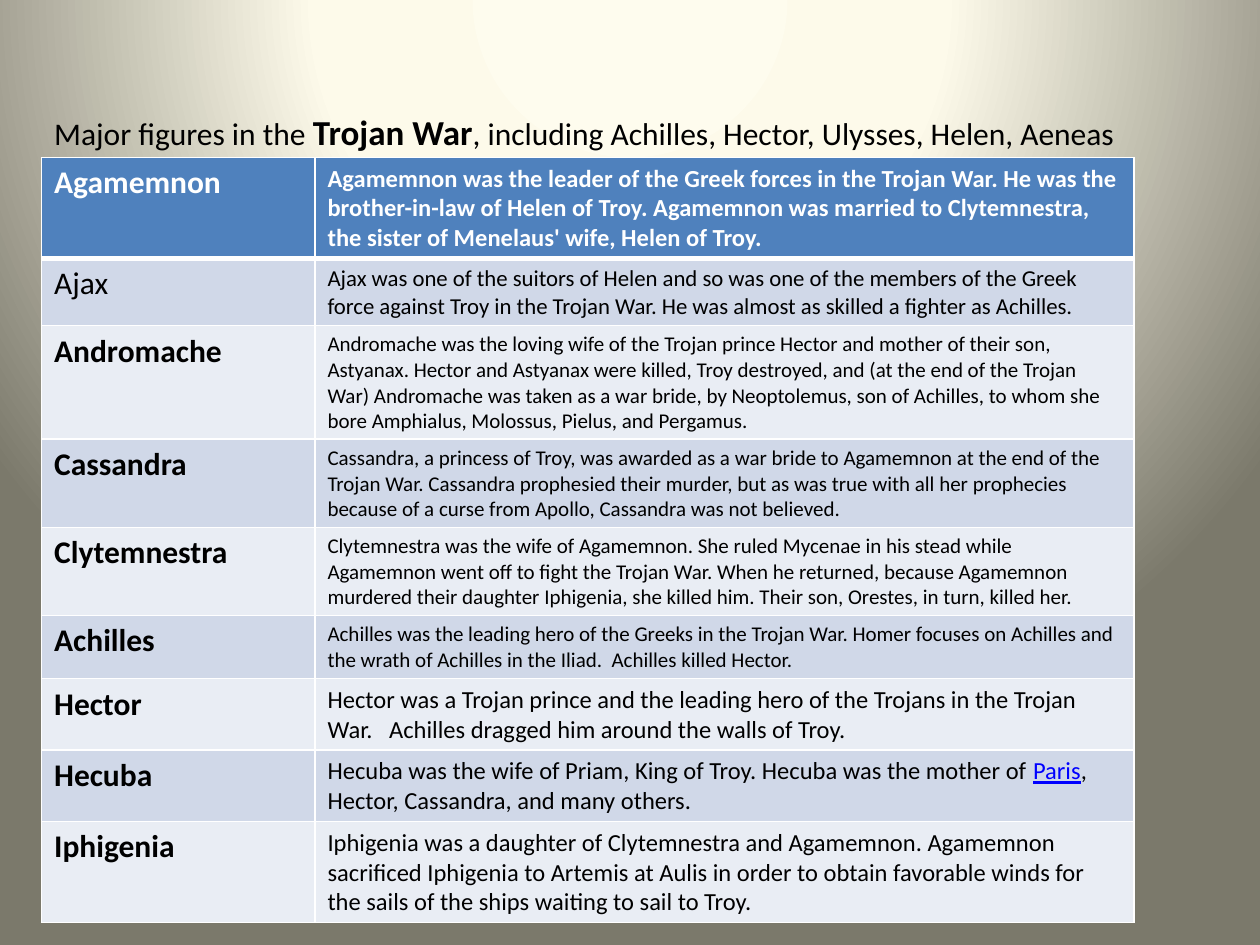
from lxml.etree import SubElement
from pptx import Presentation
from pptx.dml.color import RGBColor
from pptx.enum.text import MSO_ANCHOR, MSO_AUTO_SIZE, PP_ALIGN
from pptx.oxml import parse_xml
from pptx.oxml.ns import nsdecls, qn
from pptx.util import Inches, Pt

COLORS = {
    "ink": "000000", "white": "FFFFFF", "link": "0000FF",
    "head": "4F81BD", "dark": "D0D8E8", "light": "E9EDF4",
    "glow": "FEFCEE", "cream": "FDFAEA", "edge": "7B796B",
}
HEADING = [
    ("Major figures in the ", 18, {}),
    ("Trojan War", 20, {"bold": True}),
    (", including Achilles, Hector, Ulysses, Helen, Aeneas", 18, {}),
]
FIGURES = [
    ("Agamemnon", 14, ["Agamemnon was the leader of the Greek forces in the Trojan War. He was the brother-in-law of Helen of Troy. Agamemnon was married to Clytemnestra, the sister of Menelaus' wife, Helen of Troy."]),
    ("Ajax", 13, ["Ajax was one of the suitors of Helen and so was one of the members of the Greek force against Troy in the Trojan War. He was almost as skilled a fighter as Achilles."]),
    ("Andromache", 12, ["Andromache was the loving wife of the Trojan prince Hector and mother of their son, Astyanax. Hector and Astyanax were killed, Troy destroyed, and (at the end of the Trojan War) Andromache was taken as a war bride, by Neoptolemus, son of Achilles, to whom she bore Amphialus, Molossus, Pielus, and Pergamus."]),
    ("Cassandra", 12, ["Cassandra, a princess of Troy, was awarded as a war bride to Agamemnon at the end of the Trojan War. Cassandra prophesied their murder, but as was true with all her prophecies because of a curse from Apollo, Cassandra was not believed."]),
    ("Clytemnestra", 12, ["Clytemnestra was the wife of Agamemnon. She ruled Mycenae in his stead while Agamemnon went off to fight the Trojan War. When he returned, because Agamemnon murdered their daughter Iphigenia, she killed him. Their son, Orestes, in turn, killed her."]),
    ("Achilles", 12, ["Achilles was the leading hero of the Greeks in the Trojan War. Homer focuses on Achilles and the wrath of Achilles in the Iliad.  Achilles killed Hector."]),
    ("Hector", 14, ["Hector was a Trojan prince and the leading hero of the Trojans in the Trojan War.   Achilles dragged him around the walls of Troy."]),
    ("Hecuba", 14, ["Hecuba was the wife of Priam, King of Troy. Hecuba was the mother of ", "Paris", ", Hector, Cassandra, and many others."]),
    ("Iphigenia", 14, ["Iphigenia was a daughter of Clytemnestra and Agamemnon. Agamemnon sacrificed Iphigenia to Artemis at Aulis in order to obtain favorable winds for the sails of the ships waiting to sail to Troy."]),
]


class Deck:
    """Holds the font, the colours and the current slide."""

    def __init__(self, slide, font, colors):
        self.slide, self.font, self.colors = slide, font, colors

    def backdrop(self, stops):
        marks = "".join(
            f'<a:gs pos="{pos * 1000}"><a:srgbClr val="{self.colors[name]}"/></a:gs>'
            for pos, name in stops)
        fill = self.slide.background.fill
        fill.solid()
        props = self.slide.element.cSld.find(qn("p:bg")).find(qn("p:bgPr"))
        props.replace(props[0], parse_xml(
            f'<a:gradFill {nsdecls("a")} rotWithShape="1"><a:gsLst>{marks}</a:gsLst>'
            '<a:path path="circle"><a:fillToRect l="50000" t="-80000" r="50000" b="180000"/>'
            '</a:path></a:gradFill>'))

    def run(self, para, text, size, color="ink", bold=False, under=False):
        run = para.add_run()
        run.text = text
        font = run.font
        font.name, font.size = self.font, Pt(size)
        font.bold, font.underline = bold, under
        font.color.rgb = RGBColor.from_string(self.colors[color])

    def title(self, parts, left, top, width, height):
        shape = self.slide.shapes.title
        shape.left, shape.top = Inches(left), Inches(top)
        shape.width, shape.height = Inches(width), Inches(height)
        frame = shape.text_frame
        frame.word_wrap = True
        frame.auto_size = MSO_AUTO_SIZE.SHAPE_TO_FIT_TEXT
        frame.vertical_anchor = MSO_ANCHOR.TOP
        para = frame.paragraphs[0]
        para.alignment = PP_ALIGN.LEFT
        for text, size, style in parts:
            self.run(para, text, size, **style)

    def borders(self, cell, widths):
        props = cell._tc.get_or_add_tcPr()
        for index, (side, width) in enumerate(widths.items()):
            line = parse_xml(f'<a:ln{side} {nsdecls("a")} w="{Pt(width)}"/>')
            fill = SubElement(line, qn("a:solidFill"))
            SubElement(fill, qn("a:srgbClr")).set("val", self.colors["white"])
            props.insert(index, line)

    def table(self, rows, left, top, widths, tall, height):
        frame = self.slide.shapes.add_table(
            len(rows), len(widths), Inches(left), Inches(top),
            Inches(sum(widths)), Inches(height))
        grid = frame.table
        for col, width in zip(grid.columns, widths):
            col.width = Inches(width)
        for index, (name, size, parts) in enumerate(rows):
            grid.rows[index].height = Inches(tall)
            head = index == 0
            ink = "white" if head else "ink"
            band = "head" if head else "dark" if index % 2 else "light"
            label, story = grid.rows[index].cells
            self.run(label.text_frame.paragraphs[0], name, 18, ink, name != "Ajax")
            for text in parts:
                link = text == "Paris"
                self.run(story.text_frame.paragraphs[0], text, size,
                         "link" if link else ink, head, link)
            for cell in (label, story):
                cell.fill.solid()
                cell.fill.fore_color.rgb = RGBColor.from_string(self.colors[band])
                self.borders(cell, {"L": 1, "R": 1, "T": 3 if index == 1 else 1,
                                    "B": 3 if head else 1})
        frame.height = Inches(height)


def main():
    prs = Presentation()
    prs.slide_width, prs.slide_height = Inches(10), Inches(7.5)
    deck = Deck(prs.slides.add_slide(prs.slide_layouts[5]), "Calibri", COLORS)
    deck.backdrop([(0, "glow"), (40, "cream"), (100, "edge")])
    deck.title(HEADING, 0.33, 0.83, 9.08, 0.74)
    deck.table(FIGURES, 0.33, 1.25, [2.17, 6.5], 0.41, 6.07)
    prs.save("out.pptx")


if __name__ == "__main__":
    main()
